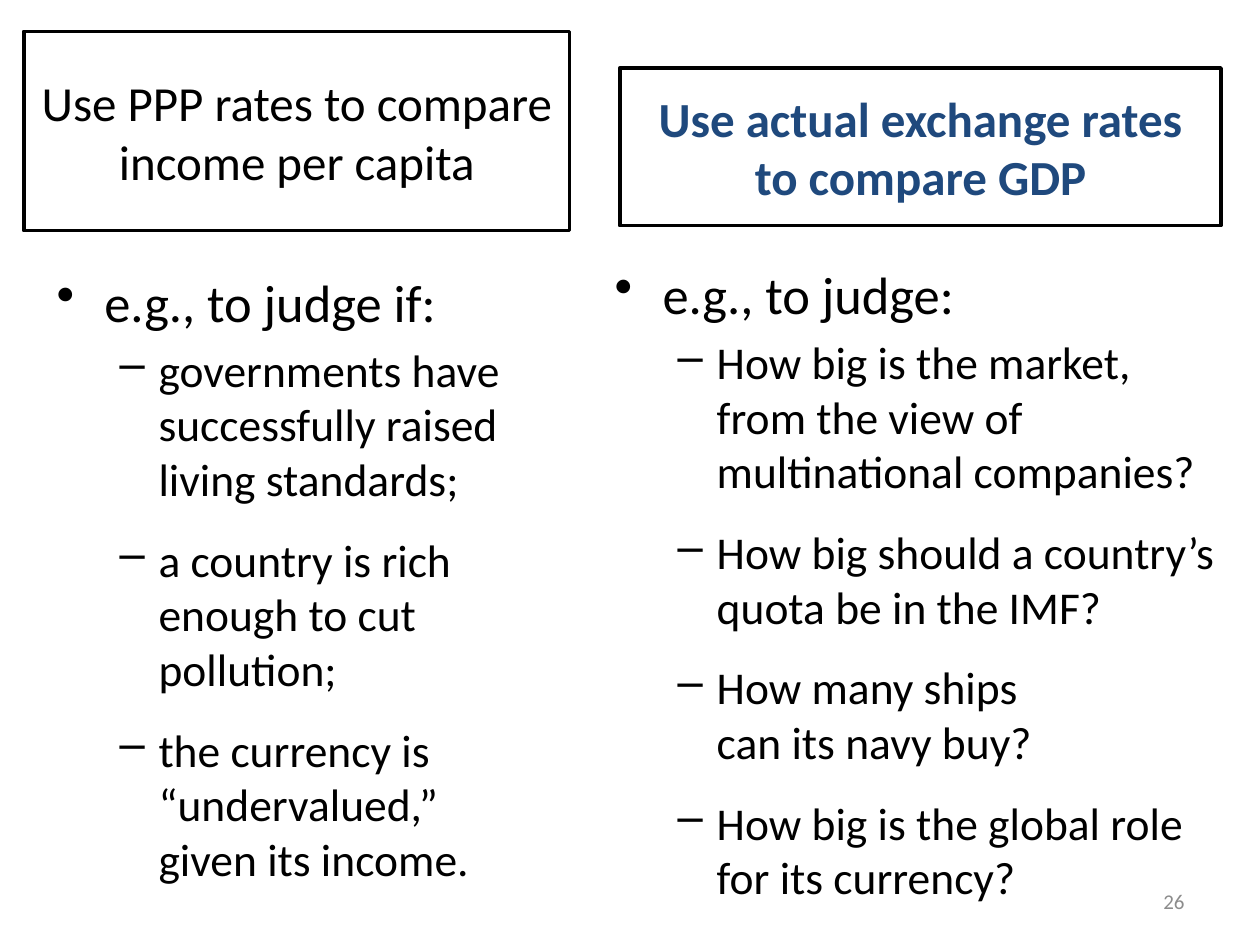
from dataclasses import dataclass

import pptx
import pptx.dml.color
import pptx.enum.shapes
import pptx.enum.text
import pptx.oxml
import pptx.oxml.ns
import pptx.util

COLORS = {"ink": "000000", "accent": "1F497D", "muted": "8C8C8C"}
FONT = "Calibri"
COLS, ROWS = 100, 75
ALIGN = pptx.enum.text.PP_ALIGN
ANCHOR = pptx.enum.text.MSO_ANCHOR


@dataclass
class Cell:
    col: float
    row: float
    cols: float
    rows: float


@dataclass
class Level:
    size: int
    bullet: str
    margin: float
    hang: float
    before: float


@dataclass
class Points:
    cell: Cell
    lead: str
    items: list[str]


LEAD = Level(30, "•", 0.38, 0.38, 6)
FIRST_ITEM = Level(26, "–", 0.81, 0.31, 5.2)
NEXT_ITEM = Level(26, "–", 0.81, 0.31, 15)

POINTS = [
    Points(Cell(3.5, 20.9, 39.9, 49.5), "e.g., to judge if:", [
        "governments have successfully raised living standards;",
        "a country is rich enough to cut pollution;",
        "the currency is “undervalued,”\vgiven its income.",
    ]),
    Points(Cell(47.8, 20.3, 52.2, 52.5), "e.g., to judge:", [
        "How big is the market,\vfrom the view of multinational companies?",
        "How big should a country’s quota be in the IMF?",
        "How many ships\vcan its navy buy?",
        "How big is the global role\vfor its currency?",
    ]),
]


def rgb(name: str):
    return pptx.dml.color.RGBColor.from_string(COLORS[name])


def place(prs, cell: Cell) -> list[int]:
    w, h = prs.slide_width / COLS, prs.slide_height / ROWS
    return [round(v) for v in (cell.col * w, cell.row * h, cell.cols * w, cell.rows * h)]


def style(p, size: int, color: str, bold: bool = False, align=ALIGN.LEFT) -> None:
    p.alignment = align
    p.font.name = FONT
    p.font.size = pptx.util.Pt(size)
    p.font.bold = bold
    p.font.color.rgb = rgb(color)


def fill_text(sp, text: str, size: int, color: str, bold: bool, align) -> None:
    tf = sp.text_frame
    tf.word_wrap = True
    tf.auto_size = pptx.enum.text.MSO_AUTO_SIZE.NONE
    tf.vertical_anchor = ANCHOR.MIDDLE
    tf.text = text
    style(tf.paragraphs[0], size, color, bold, align)


def draw_heading(sp, text: str, color: str, bold: bool = False) -> None:
    sp.fill.background()
    sp.line.color.rgb = rgb("ink")
    sp.line.width = pptx.util.Pt(2.25)
    fill_text(sp, text, 28, color, bold, ALIGN.CENTER)


def add_point(p, text: str, level: Level) -> None:
    p.text = text
    style(p, level.size, "ink")
    p.space_before = pptx.util.Pt(level.before)
    pPr = p._p.get_or_add_pPr()
    pPr.set("marL", str(pptx.util.Inches(level.margin)))
    pPr.set("indent", str(-pptx.util.Inches(level.hang)))
    bullet = pptx.oxml.parse_xml(
        f'<a:buChar {pptx.oxml.ns.nsdecls("a")} char="{level.bullet}"/>')
    pPr.find(pptx.oxml.ns.qn("a:defRPr")).addprevious(bullet)


def draw_points(prs, s, points: Points) -> None:
    tf = s.shapes.add_textbox(*place(prs, points.cell)).text_frame
    tf.word_wrap = True
    add_point(tf.paragraphs[0], points.lead, LEAD)
    for i, item in enumerate(points.items):
        p = tf.add_paragraph()
        p.level = 1
        add_point(p, item, NEXT_ITEM if i else FIRST_ITEM)


def main() -> None:
    prs = pptx.Presentation()
    prs.slide_width = pptx.util.Inches(10)
    prs.slide_height = pptx.util.Inches(7.5)
    s = prs.slides.add_slide(prs.slide_layouts[5])

    title = s.shapes.title
    title.left, title.top, title.width, title.height = place(prs, Cell(1.9, 2.5, 43.3, 15.8))
    draw_heading(title, "Use PPP rates to compare income per capita", "ink")

    gdp = s.shapes.add_shape(pptx.enum.shapes.MSO_SHAPE.RECTANGLE,
                             *place(prs, Cell(49.2, 5.4, 47.7, 12.5)))
    gdp.shadow.inherit = False
    draw_heading(gdp, "Use actual exchange rates to compare GDP", "accent", True)

    for points in POINTS:
        draw_points(prs, s, points)

    number = s.shapes.add_textbox(*place(prs, Cell(71.7, 69.5, 23.3, 4)))
    fill_text(number, "26", 12, "muted", False, ALIGN.RIGHT)

    prs.save("out.pptx")


if __name__ == "__main__":
    main()
